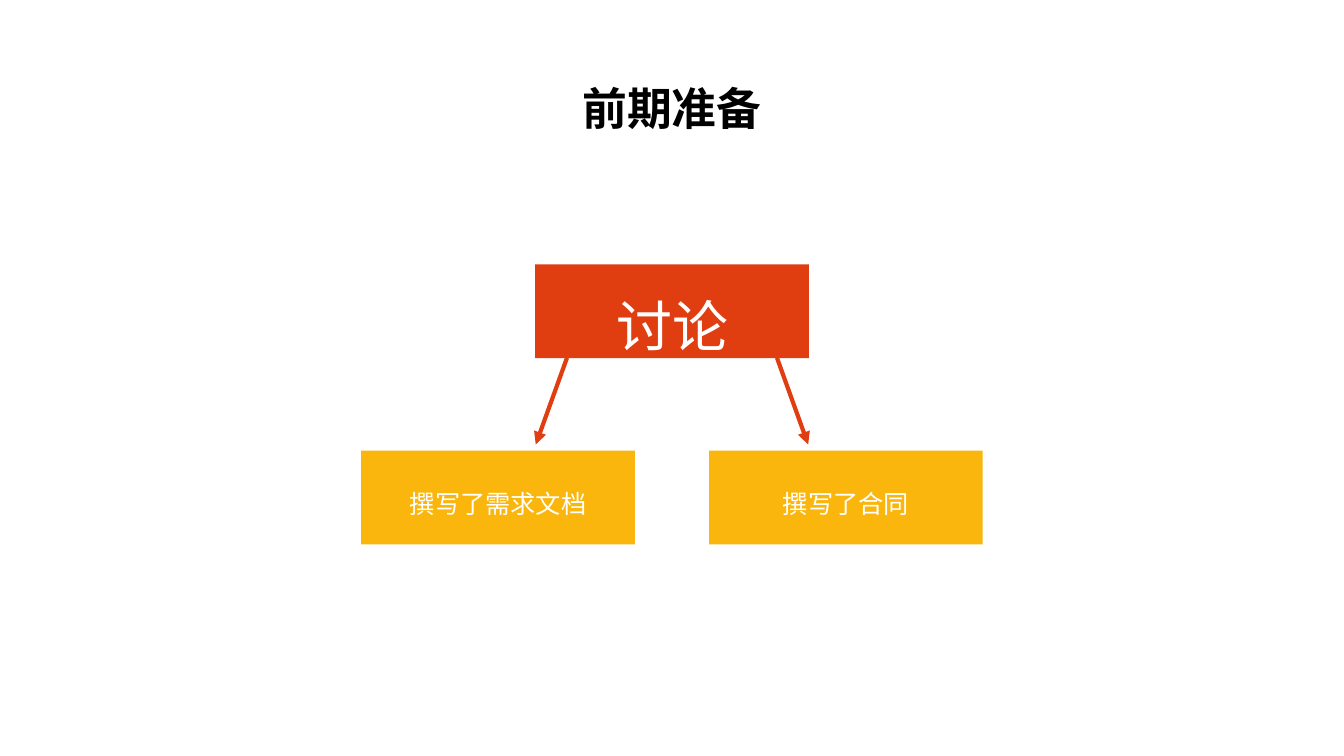
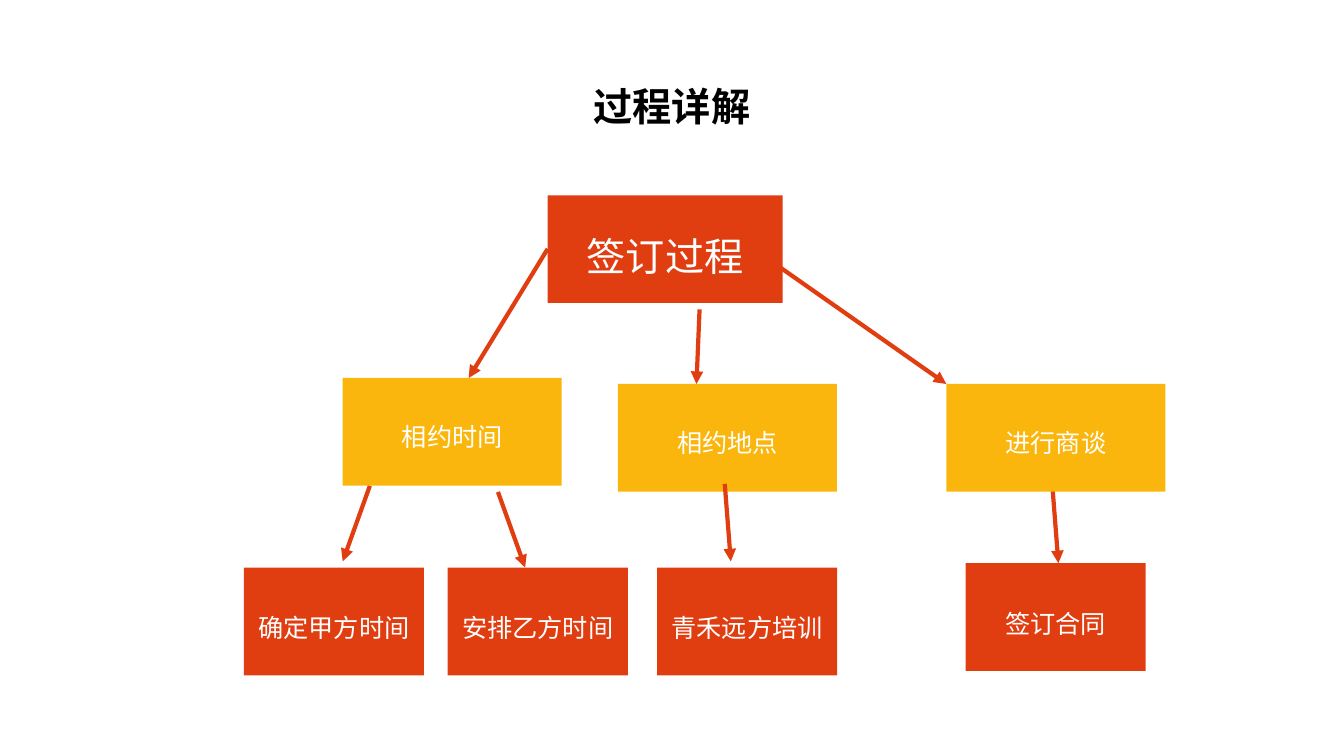
from dataclasses import dataclass

from lxml import etree
from pptx import Presentation
from pptx.dml.color import RGBColor
from pptx.enum.shapes import MSO_CONNECTOR, MSO_SHAPE
from pptx.enum.text import MSO_ANCHOR, PP_ALIGN
from pptx.oxml.ns import qn
from pptx.slide import Slide
from pptx.text.text import TextFrame
from pptx.util import Pt

RECTANGLE = MSO_SHAPE.RECTANGLE
STRAIGHT = MSO_CONNECTOR.STRAIGHT
MIDDLE = MSO_ANCHOR.MIDDLE
CENTER = PP_ALIGN.CENTER

FONT = "Arial"
RED, YELLOW, WHITE, BLACK = "E03E11", "FAB60C", "FFFFFF", "000000"
SLIDE_WIDTH, SLIDE_HEIGHT = 960, 540
MID_X = SLIDE_WIDTH / 2
TITLE_WIDTH, TITLE_HEIGHT = 765.4, 65.5


@dataclass(frozen=True)
class Step:
    text: str
    left: float
    top: float
    width: float
    height: float
    fill: str
    size: float = 18
    spacing: float = 1.4


@dataclass(frozen=True)
class Arrow:
    x1: float
    y1: float
    x2: float
    y2: float
    in_front: bool = False


@dataclass(frozen=True)
class Flow:
    title: str
    title_size: float
    title_top: float
    steps: list[Step]
    arrows: list[Arrow]


def rgb(value: str) -> RGBColor:
    return RGBColor.from_string(value)


def write(frame: TextFrame, text: str, size: float, color: str,
          spacing: float, bold: bool = False) -> None:
    frame.word_wrap = True
    frame.vertical_anchor = MIDDLE
    frame.text = text
    paragraph = frame.paragraphs[0]
    paragraph.alignment = CENTER
    paragraph.line_spacing = spacing
    font = paragraph.runs[0].font
    font.name, font.size, font.bold = FONT, Pt(size), bold
    font.color.rgb = rgb(color)


def add_title(slide: Slide, flow: Flow) -> None:
    title = slide.shapes.add_textbox(
        Pt(MID_X - TITLE_WIDTH / 2), Pt(flow.title_top),
        Pt(TITLE_WIDTH), Pt(TITLE_HEIGHT))
    write(title.text_frame, flow.title, flow.title_size, BLACK, 1.2, True)


def add_step(slide: Slide, step: Step) -> None:
    box = slide.shapes.add_shape(
        RECTANGLE, Pt(step.left), Pt(step.top), Pt(step.width), Pt(step.height))
    box.shadow.inherit = False
    box.fill.solid()
    box.fill.fore_color.rgb = rgb(step.fill)
    box.line.fill.background()
    write(box.text_frame, step.text, step.size, WHITE, step.spacing)


def add_arrow(slide: Slide, arrow: Arrow) -> None:
    connector = slide.shapes.add_connector(
        STRAIGHT, Pt(arrow.x1), Pt(arrow.y1), Pt(arrow.x2), Pt(arrow.y2))
    connector.line.color.rgb = rgb(RED)
    connector.line.width = Pt(3)
    # Arrowhead at the end, no shadow
    etree.SubElement(connector.line._get_or_add_ln(), qn("a:tailEnd"),
                     type="triangle")
    etree.SubElement(connector._element.spPr, qn("a:effectLst"))


def add_flow(presentation: Presentation, flow: Flow) -> None:
    slide = presentation.slides.add_slide(presentation.slide_layouts[6])
    add_title(slide, flow)
    for arrow in flow.arrows:
        if not arrow.in_front:
            add_arrow(slide, arrow)
    for step in flow.steps:
        add_step(slide, step)
    for arrow in flow.arrows:
        if arrow.in_front:
            add_arrow(slide, arrow)


def preparation() -> Flow:
    width, height, child_offset = 195.5, 67, 124.2

    def centred(text: str, offset: float, top: float, fill: str,
                size: float = 18) -> Step:
        return Step(text, MID_X + offset - width / 2, top, width, height,
                    fill, size)

    steps = [
        centred("讨论", 0, 188.8, RED, 40),
        centred("撰写了需求文档", -child_offset, 321.9, YELLOW),
        centred("撰写了合同", child_offset, 321.9, YELLOW),
    ]
    arrows = [Arrow(MID_X + side * 75, 255.6, MID_X + side * 97.3, 317.5)
              for side in (-1, 1)]
    return Flow("前期准备", 32, 40.3, steps, arrows)


def signing() -> Flow:
    height = 77
    stages = [("相约时间", 244.8, 270), ("相约地点", 441.4, 274.3),
              ("进行商谈", 676, 274.3)]
    details = [("确定甲方时间", 174.2, 405.4), ("安排乙方时间", 319.8, 405.4),
               ("青禾远方培训", 469.4, 405.4), ("签订合同", 689.7, 402.3)]
    steps = [Step("签订过程", 391.2, 139.5, 167.8, height, RED, 28, 1.3)]
    steps += [Step(text, left, top, 156.4, height, YELLOW, spacing=1.3)
              for text, left, top in stages]
    steps += [Step(text, left, top, 128.7, height, RED)
              for text, left, top in details]
    arrows = [
        # From the process to its stages
        Arrow(391.2, 177.8, 334.8, 270),
        Arrow(499.7, 221, 497.5, 274.3),
        Arrow(555.8, 190, 676, 274.3),
        # From the stages to their details
        Arrow(264.2, 347, 244.8, 401),
        Arrow(355.7, 351.4, 375.1, 405.4),
        Arrow(517.7, 345.6, 522, 401, in_front=True),
        Arrow(751.7, 347, 756, 402.3),
    ]
    return Flow("过程详解", 28, 39.6, steps, arrows)


def main() -> None:
    presentation = Presentation()
    presentation.slide_width = Pt(SLIDE_WIDTH)
    presentation.slide_height = Pt(SLIDE_HEIGHT)
    for flow in (preparation(), signing()):
        add_flow(presentation, flow)
    presentation.save("out.pptx")


if __name__ == "__main__":
    main()
